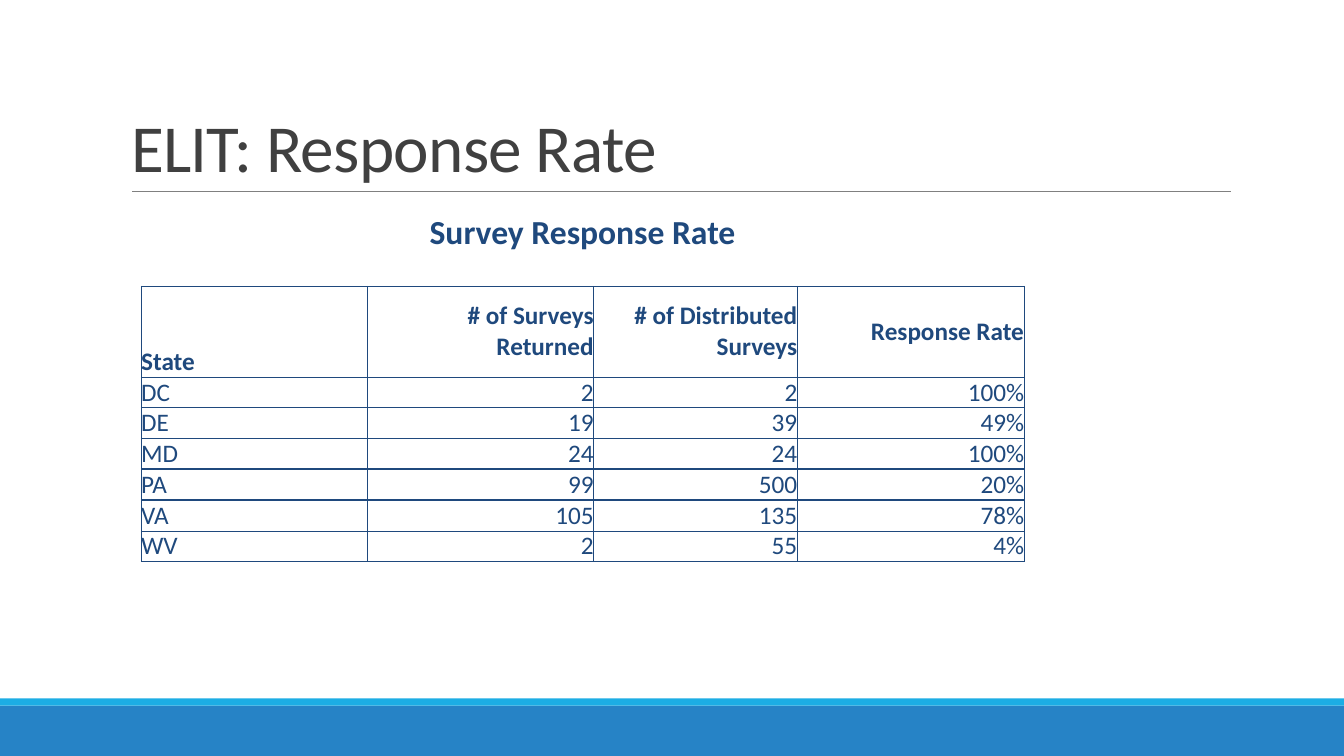
from lxml.etree import SubElement
from pptx import Presentation
from pptx.dml.color import RGBColor
from pptx.enum.shapes import MSO_CONNECTOR as Connector, MSO_SHAPE as Shape
from pptx.enum.text import MSO_ANCHOR as Anchor, MSO_AUTO_SIZE as AutoSize, PP_ALIGN as Align
from pptx.oxml.ns import qn
from pptx.util import Pt

NAVY = "1F497D"
NO_STYLE = "{2D5ABB26-0587-4C30-8999-92F81FD0307C}"
THIN, THICK = 0.5, 1.5
SIDES = {"left": "a:lnL", "right": "a:lnR", "top": "a:lnT", "bottom": "a:lnB"}
COLUMN_WIDTHS = [161.28, 162, 145.44, 162]
ROW_HEIGHTS = [41.76, 17.28, 64.8] + [21.96] * 6 + [17.28, 173.52]
TITLE_ROW, HEADER_ROW = 0, 2
HEADERS = ["State", "# of Surveys Returned", "# of Distributed Surveys", "Response Rate"]
RESPONSES = [
    ["DC", "2", "2", "100%"],
    ["DE", "19", "39", "49%"],
    ["MD", "24", "24", "100%"],
    ["PA", "99", "500", "20%"],
    ["VA", "105", "135", "78%"],
    ["WV", "2", "55", "4%"],
]
LAST_STATE_ROW = HEADER_ROW + len(RESPONSES)
THICK_EDGES = [6, 7]


def color(value):
    return RGBColor.from_string(value)


def apply(target, values):
    for name, value in values.items():
        setattr(target, name, value)


def format_font(font, size, fill, bold=False):
    apply(font, {"name": "Calibri", "size": Pt(size), "bold": bold})
    font.color.rgb = color(fill)


def add_band(slide, top, height, fill):
    band = slide.shapes.add_shape(Shape.RECTANGLE, 0, Pt(top), Pt(960), Pt(height))
    band.shadow.inherit = False
    band.fill.solid()
    band.fill.fore_color.rgb = color(fill)
    band.line.fill.background()


def add_rule(slide, left, right, top):
    rule = slide.shapes.add_connector(Connector.STRAIGHT, Pt(left), Pt(top), Pt(right), Pt(top))
    rule.line.width = Pt(THIN)
    rule.line.color.rgb = color("808080")
    SubElement(rule.element.spPr, qn("a:effectLst"))


def format_title(slide, text):
    title = slide.shapes.title
    apply(title, {"left": Pt(86.4), "top": Pt(22.32), "width": Pt(792), "height": Pt(114.48)})
    frame = title.text_frame
    apply(frame, {"text": text, "vertical_anchor": Anchor.BOTTOM,
                  "word_wrap": True, "auto_size": AutoSize.NONE})
    paragraph = frame.paragraphs[0]
    apply(paragraph, {"alignment": Align.LEFT, "line_spacing": 0.85})
    font = paragraph.runs[0].font
    format_font(font, 48, "404040")
    paragraph.runs[0]._r.get_or_add_rPr().set("spc", "-50")


def set_borders(cell, widths):
    properties = cell._tc.get_or_add_tcPr()
    for side, tag in SIDES.items():
        width = widths.get(side, 0)
        line = SubElement(properties, qn(tag), w=str(Pt(width)))
        if width:
            fill = SubElement(line, qn("a:solidFill"))
            SubElement(fill, qn("a:srgbClr"), val=NAVY)
        else:
            SubElement(line, qn("a:noFill"))


def border_widths(row):
    def edge(index):
        if not HEADER_ROW <= index <= LAST_STATE_ROW + 1:
            return 0
        return THICK if index in THICK_EDGES else THIN

    side = THIN if HEADER_ROW <= row <= LAST_STATE_ROW else 0
    return {"left": side, "right": side, "top": edge(row), "bottom": edge(row + 1)}


def write_cell(cell, text, size, bold, alignment, anchor):
    apply(cell, {"text": text, "vertical_anchor": anchor})
    paragraph = cell.text_frame.paragraphs[0]
    paragraph.alignment = alignment
    format_font(paragraph.runs[0].font, size, NAVY, bold)


def add_response_table(slide):
    frame = slide.shapes.add_table(len(ROW_HEIGHTS), len(COLUMN_WIDTHS), Pt(100.8), Pt(145.44),
                                   Pt(sum(COLUMN_WIDTHS)), Pt(sum(ROW_HEIGHTS)))
    table = frame.table
    apply(table, {"first_row": False, "horz_banding": False})
    table._tbl.tblPr.find(qn("a:tableStyleId")).text = NO_STYLE
    for column, width in zip(table.columns, COLUMN_WIDTHS):
        column.width = Pt(width)
    for index, (row, height) in enumerate(zip(table.rows, ROW_HEIGHTS)):
        row.height = Pt(height)
        for cell in row.cells:
            apply(cell, dict.fromkeys(
                ["margin_left", "margin_right", "margin_top", "margin_bottom"], 0))
            set_borders(cell, border_widths(index))
            cell.fill.background()
            SubElement(cell.text_frame.paragraphs[0]._p, qn("a:endParaRPr"), sz="1200")
    for index in (TITLE_ROW, len(ROW_HEIGHTS) - 1):
        table.cell(index, 0).merge(table.cell(index, len(COLUMN_WIDTHS) - 1))

    write_cell(table.cell(TITLE_ROW, 0), "Survey Response Rate", 24, True,
               Align.CENTER, Anchor.MIDDLE)
    for offset, texts in enumerate([HEADERS] + RESPONSES):
        is_header = offset == 0
        for column, text in enumerate(texts):
            alignment = Align.RIGHT if column else Align.LEFT
            anchor = Anchor.MIDDLE if is_header and column else Anchor.BOTTOM
            write_cell(table.cell(HEADER_ROW + offset, column), text, 18, is_header,
                       alignment, anchor)


def main():
    presentation = Presentation()
    apply(presentation, {"slide_width": Pt(960), "slide_height": Pt(540)})
    slide = presentation.slides.add_slide(presentation.slide_layouts[5])
    add_band(slide, 504, 36, "2683C6")
    add_band(slide, 498.96, 5.04, "1CADE4")
    add_rule(slide, 94.32, 879.12, 136.8)
    format_title(slide, "ELIT: Response Rate")
    add_response_table(slide)
    presentation.save("out.pptx")


if __name__ == "__main__":
    main()
